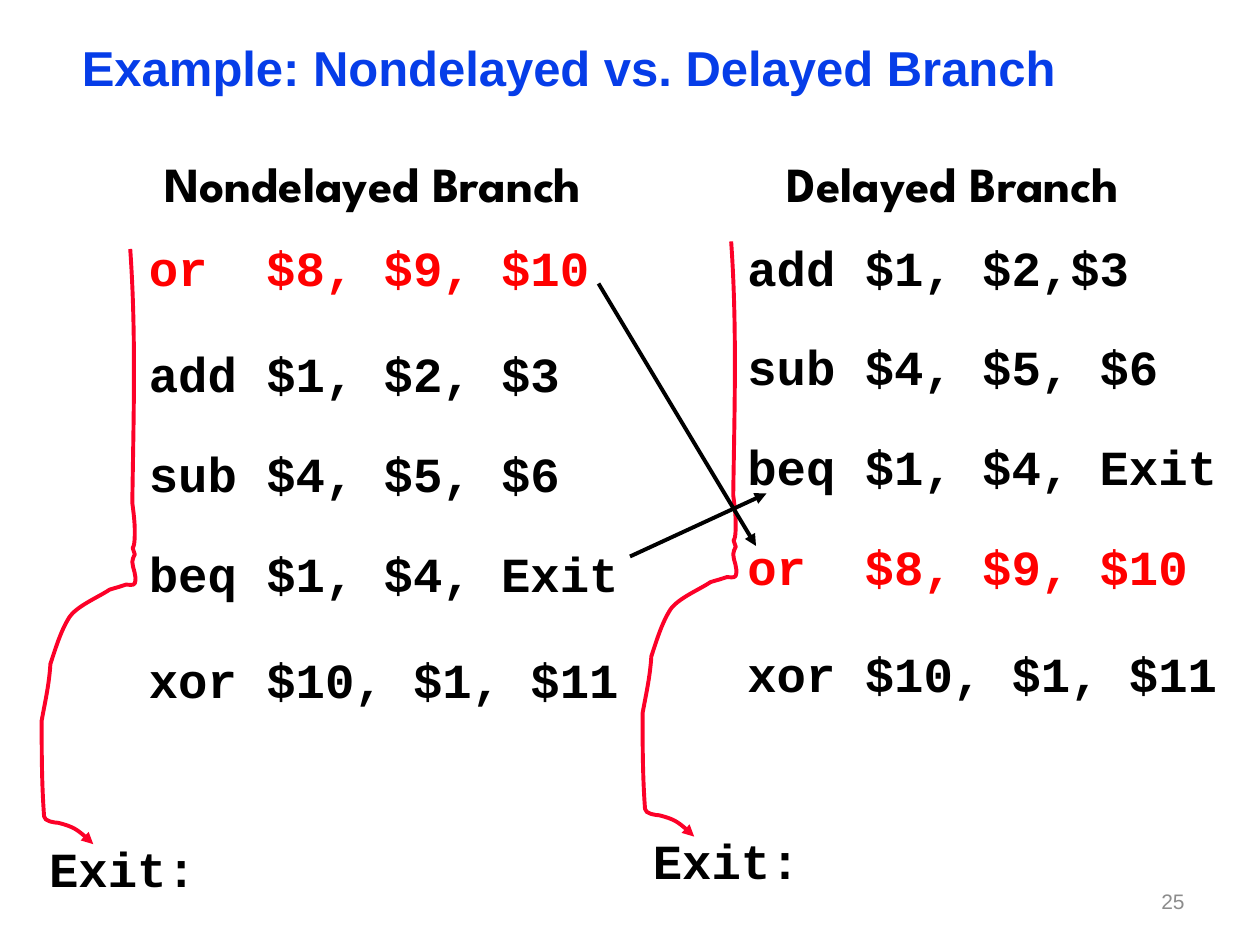
import pptx
import pptx.util
import pptx.dml.color
import pptx.enum.shapes
import pptx.enum.text
import pptx.oxml.ns
from lxml import etree

Pt = pptx.util.Pt
qn = pptx.oxml.ns.qn
ALIGN = pptx.enum.text.PP_ALIGN
ANCHOR = pptx.enum.text.MSO_ANCHOR
COLORS = {"title": "063DE8", "code": "000000", "moved": "FF0000",
          "jump": "FC0128", "number": "8C8C8C"}
CODE_FONT = "Courier New"
CHAR_WIDTH = 16.8  # one 28 pt Courier New character
ROW_HEIGHT = 41


def add_text(page, text, left, top, width, height, font, color, size=28,
             bold=True, align=ALIGN.LEFT, anchor=ANCHOR.TOP):
    box = page.shapes.add_textbox(Pt(left), Pt(top), Pt(width), Pt(height))
    box.text_frame.word_wrap = False
    box.text_frame.vertical_anchor = anchor
    para = box.text_frame.paragraphs[0]
    para.text = text
    para.alignment = align
    para.font.name, para.font.size, para.font.bold = font, Pt(size), bold
    para.font.color.rgb = pptx.dml.color.RGBColor.from_string(COLORS[color])
    return box


def style_arrow(shape, color):
    shape.line.color.rgb = pptx.dml.color.RGBColor.from_string(COLORS[color])
    shape.line.width = Pt(2.25)
    properties = shape._element.spPr
    etree.SubElement(properties.find(qn("a:ln")), qn("a:tailEnd"), type="triangle")
    etree.SubElement(properties, qn("a:effectLst"))


deck = pptx.Presentation()
deck.slide_width, deck.slide_height = Pt(720), Pt(540)
page = deck.slides.add_slide(deck.slide_layouts[5])

# Title
title = page.shapes.title
title.left, title.top, title.width, title.height = Pt(41.8), Pt(23.8), Pt(642), Pt(33)
frame = title.text_frame
frame.text = "Example: Nondelayed vs. Delayed Branch"
frame.vertical_anchor = ANCHOR.TOP
frame.margin_left = frame.margin_right = Pt(5)
frame.margin_top = frame.margin_bottom = Pt(2)
para = frame.paragraphs[0]
para.alignment, para.line_spacing = ALIGN.LEFT, 0.87
para.font.name, para.font.size, para.font.bold = "Arial", Pt(28), True
para.font.color.rgb = pptx.dml.color.RGBColor.from_string(COLORS["title"])

# Column headings: text, left, width
for text, left, width in [("Nondelayed Branch", 66, 293.8), ("Delayed Branch", 426.2, 236.2)]:
    add_text(page, text, left, 84.2, width, ROW_HEIGHT, "League Spartan", "code",
             align=ALIGN.CENTER, anchor=ANCHOR.MIDDLE)

# Instructions and branch targets: text, left, top
code_lines = [
    ("or  $8, $9, $10", 78, 132),
    ("add $1, $2, $3", 78, 193),
    ("sub $4, $5, $6", 78, 249.8),
    ("beq $1, $4, Exit", 78, 306.9),
    ("xor $10, $1, $11", 78, 367.6),
    ("Exit:", 21, 475.6),
    ("add $1, $2,$3", 420, 132),
    ("sub $4, $5, $6", 420, 189),
    ("beq $1, $4, Exit", 420, 246.2),
    ("or  $8, $9, $10", 420, 303.1),
    ("xor $10, $1, $11", 420, 364.3),
    ("Exit:", 366, 471.2),
]
for text, left, top in code_lines:
    color = "moved" if text.startswith("or") else "code"
    add_text(page, text, left, top, len(text) * CHAR_WIDTH + 14.4, ROW_HEIGHT,
             CODE_FONT, color)

# Jump paths: a chain of Bezier curves, each with two controls and an end
jump_start = (74.4, 142.3)
jump_curves = [
    ((77.8, 190.8), (76.3, 238.3), (75.6, 287.3)),
    ((76.3, 293), (77, 298.1), (77, 303.8)),
    ((77, 319), (74.2, 308.2), (77, 316.8)),
    ((76.3, 318.2), (75.6, 319.7), (75.6, 321.1)),
    ((75.6, 324.7), (78.5, 329), (77, 333.4)),
    ((76.3, 334.8), (73.4, 334.1), (72, 334.1)),
    ((70.6, 334.8), (69.1, 334.8), (67.7, 335.5)),
    ((66.2, 336.2), (64.1, 336.2), (62.6, 337)),
    ((56.2, 341.3), (43.9, 346.3), (39.6, 352.8)),
    ((34.6, 360.7), (31.7, 370.8), (28.8, 379.4)),
    ((28.1, 391), (25.9, 400.3), (23.8, 411.8)),
    ((23.8, 429.8), (23.8, 447.8), (25.2, 466.6)),
    ((25.2, 469.4), (31.7, 470.2), (33.1, 470.2)),
    ((41.8, 472.3), (46.8, 475.9), (53.3, 482.4)),
]
for shift_x, shift_y in [(0, 0), (343.4, -4.3)]:
    curves = [[(Pt(x + shift_x), Pt(y + shift_y)) for x, y in curve]
              for curve in jump_curves]
    builder = page.shapes.build_freeform(Pt(jump_start[0] + shift_x),
                                         Pt(jump_start[1] + shift_y))
    builder.add_line_segments([curve[-1] for curve in curves], close=False)
    jump = builder.convert_to_shape()
    # Turn each straight segment into its curve
    segments = list(jump._element.spPr.iter(qn("a:lnTo")))
    for segment, curve in zip(segments, curves):
        bezier = etree.Element(qn("a:cubicBezTo"))
        for x, y in curve:
            etree.SubElement(bezier, qn("a:pt"), x=str(x - jump.left), y=str(y - jump.top))
        segment.getparent().replace(segment, bezier)
    jump.fill.background()
    style_arrow(jump, "jump")

# Arrows from the old to the new instruction slots
for ends in [(342, 162, 432, 312), (360, 318, 438, 282)]:
    arrow = page.shapes.add_connector(pptx.enum.shapes.MSO_CONNECTOR.STRAIGHT,
                                      *[Pt(value) for value in ends])
    style_arrow(arrow, "code")

# Slide number
number = add_text(page, "25", 516, 500.4, 168, 28.8, "Arial", "number", size=12,
                  bold=False, align=ALIGN.RIGHT, anchor=ANCHOR.MIDDLE)
number.text_frame.word_wrap = True

deck.save("out.pptx")
